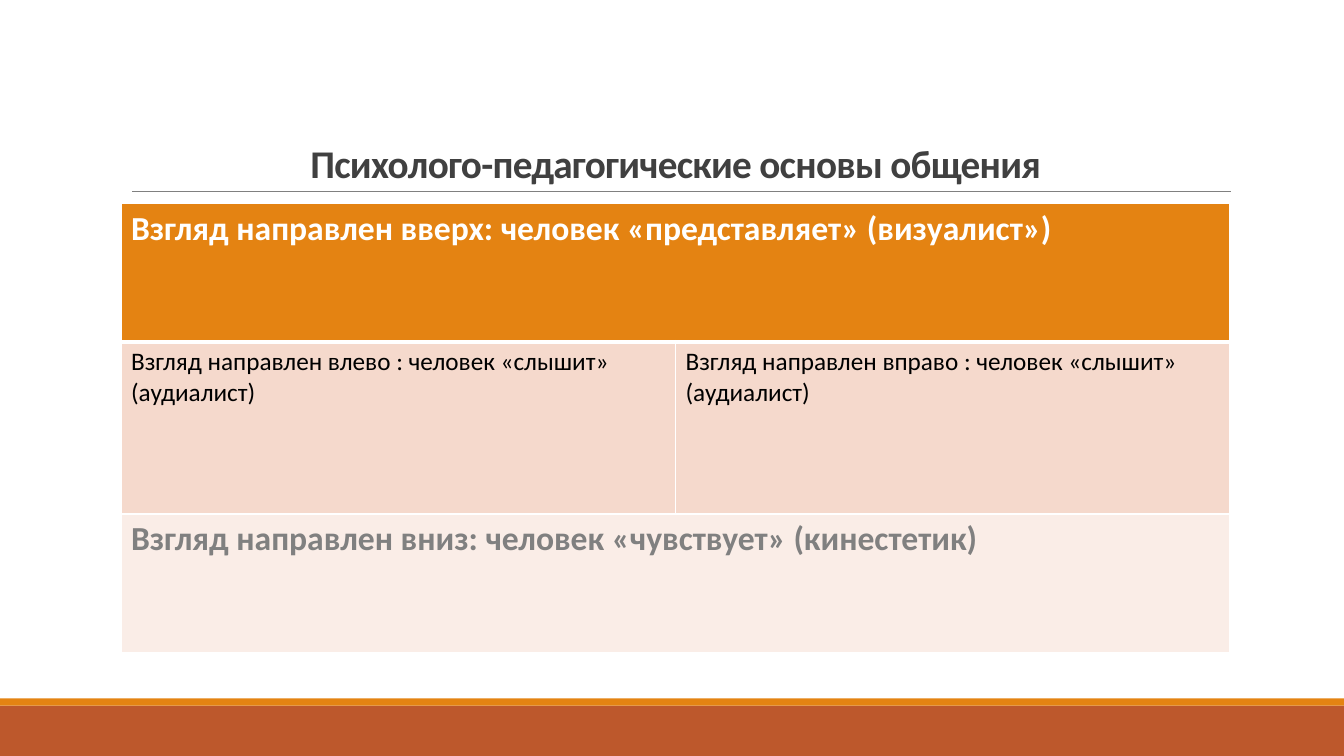
from lxml.etree import SubElement
from pptx import Presentation
from pptx.dml.color import RGBColor
from pptx.enum.shapes import MSO_CONNECTOR as Connector, MSO_SHAPE as Shape
from pptx.enum.text import MSO_ANCHOR as Anchor, MSO_AUTO_SIZE as AutoSize, PP_ALIGN as Align
from pptx.oxml import parse_xml
from pptx.oxml.ns import nsdecls, qn
from pptx.util import Inches, Pt

# Content
WHITE = RGBColor(0xFF, 0xFF, 0xFF)
BLACK = RGBColor(0x00, 0x00, 0x00)
GRAY = RGBColor(0x80, 0x80, 0x80)
DARK = RGBColor(0x40, 0x40, 0x40)
ORANGE = RGBColor(0xE4, 0x83, 0x12)
RUST = RGBColor(0xBD, 0x58, 0x2C)
PEACH = RGBColor(0xF5, 0xD9, 0xCC)
PALE = RGBColor(0xFA, 0xED, 0xE7)
FONT = "Calibri"

TITLE = "Психолого-педагогические основы общения"
# Each row: cell texts, height, fill, text colour, size, bold, bottom border width
ROWS = [
    (["Взгляд направлен вверх: человек «представляет» (визуалист»)"],
     1.37, ORANGE, WHITE, 24, True, 3),
    (["Взгляд направлен влево : человек «слышит»\n(аудиалист)",
      "Взгляд направлен вправо : человек «слышит»\n(аудиалист)"],
     1.71, PEACH, BLACK, 18, False, 1),
    (["Взгляд направлен вниз: человек «чувствует» (кинестетик)"],
     1.37, PALE, GRAY, 24, True, 1),
]

# Layout
WIDTH, HEIGHT = 13.33, 7.5
LEFT, CONTENT_WIDTH, COLUMNS = 1.2, 11, 2
TITLE_TOP, TITLE_HEIGHT = 0.31, 1.59
RULE_Y, RULE_LEFT, RULE_RIGHT = 1.9, 1.31, 12.21
TABLE_TOP = 2.02
BANDS = [(7, 0.5, RUST), (6.93, 0.07, ORANGE)]


def set_borders(cell, widths):
    """Draw white borders; widths maps a side (L, R, T, B) to points."""
    properties = cell._tc.get_or_add_tcPr()
    for index, (side, points) in enumerate(widths.items()):
        properties.insert(index, parse_xml(
            f'<a:ln{side} {nsdecls("a")} w="{Pt(points)}"><a:solidFill>'
            f'<a:srgbClr val="{WHITE}"/></a:solidFill></a:ln{side}>'))


def style(paragraph, size, color, bold):
    font = paragraph.font
    font.name, font.size, font.bold = FONT, Pt(size), bold
    font.color.rgb = color


def add_footer_bands(slide):
    for top, height, color in BANDS:
        band = slide.shapes.add_shape(
            Shape.RECTANGLE, 0, Inches(top), Inches(WIDTH), Inches(height))
        band.shadow.inherit = False
        band.fill.solid()
        band.fill.fore_color.rgb = color
        band.line.fill.background()


def add_rule(slide):
    rule = slide.shapes.add_connector(
        Connector.STRAIGHT, Inches(RULE_LEFT), Inches(RULE_Y),
        Inches(RULE_RIGHT), Inches(RULE_Y))
    rule.line.color.rgb = GRAY
    rule.line.width = Pt(0.5)
    SubElement(rule._element.spPr, qn("a:effectLst"))


def fill_title(slide):
    title = slide.shapes.title
    title.left, title.top = Inches(LEFT), Inches(TITLE_TOP)
    title.width, title.height = Inches(CONTENT_WIDTH), Inches(TITLE_HEIGHT)
    frame = title.text_frame
    frame.text = TITLE
    frame.vertical_anchor = Anchor.BOTTOM
    frame.auto_size = AutoSize.NONE
    paragraph = frame.paragraphs[0]
    paragraph.alignment = Align.CENTER
    paragraph.line_spacing = 0.85
    style(paragraph, 28, DARK, True)
    paragraph.runs[0].font._element.set("spc", "-50")


def add_gaze_table(slide):
    table = slide.shapes.add_table(
        len(ROWS), COLUMNS, Inches(LEFT), Inches(TABLE_TOP),
        Inches(CONTENT_WIDTH), Inches(sum(row[1] for row in ROWS))).table
    top_border = 1
    for index, (texts, height, fill, color, size, bold, bottom) in enumerate(ROWS):
        table.rows[index].height = Inches(height)
        if len(texts) < COLUMNS:
            table.cell(index, 0).merge(table.cell(index, COLUMNS - 1))
        for column in range(COLUMNS):
            cell = table.cell(index, column)
            cell.fill.solid()
            cell.fill.fore_color.rgb = fill
            set_borders(cell, {"L": 1, "R": 1, "T": top_border, "B": bottom})
            if column < len(texts):
                cell.text = texts[column]
                for paragraph in cell.text_frame.paragraphs:
                    style(paragraph, size, color, bold)
        top_border = bottom


def main():
    presentation = Presentation()
    presentation.slide_width = Inches(WIDTH)
    presentation.slide_height = Inches(HEIGHT)
    slide = presentation.slides.add_slide(presentation.slide_layouts[5])
    slide.background.fill.solid()
    slide.background.fill.fore_color.rgb = WHITE
    add_footer_bands(slide)
    add_rule(slide)
    fill_title(slide)
    add_gaze_table(slide)
    presentation.save("out.pptx")


if __name__ == "__main__":
    main()
